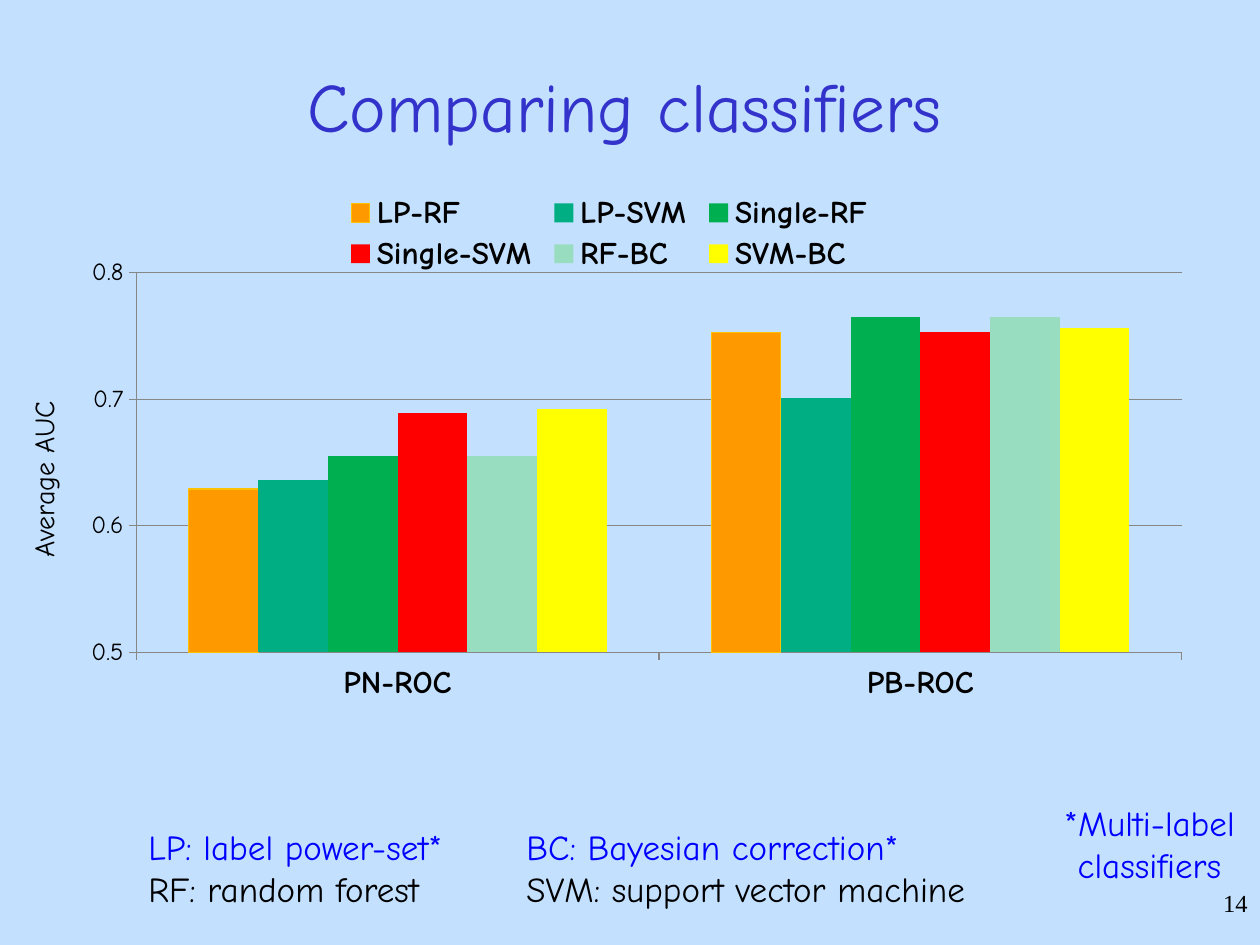
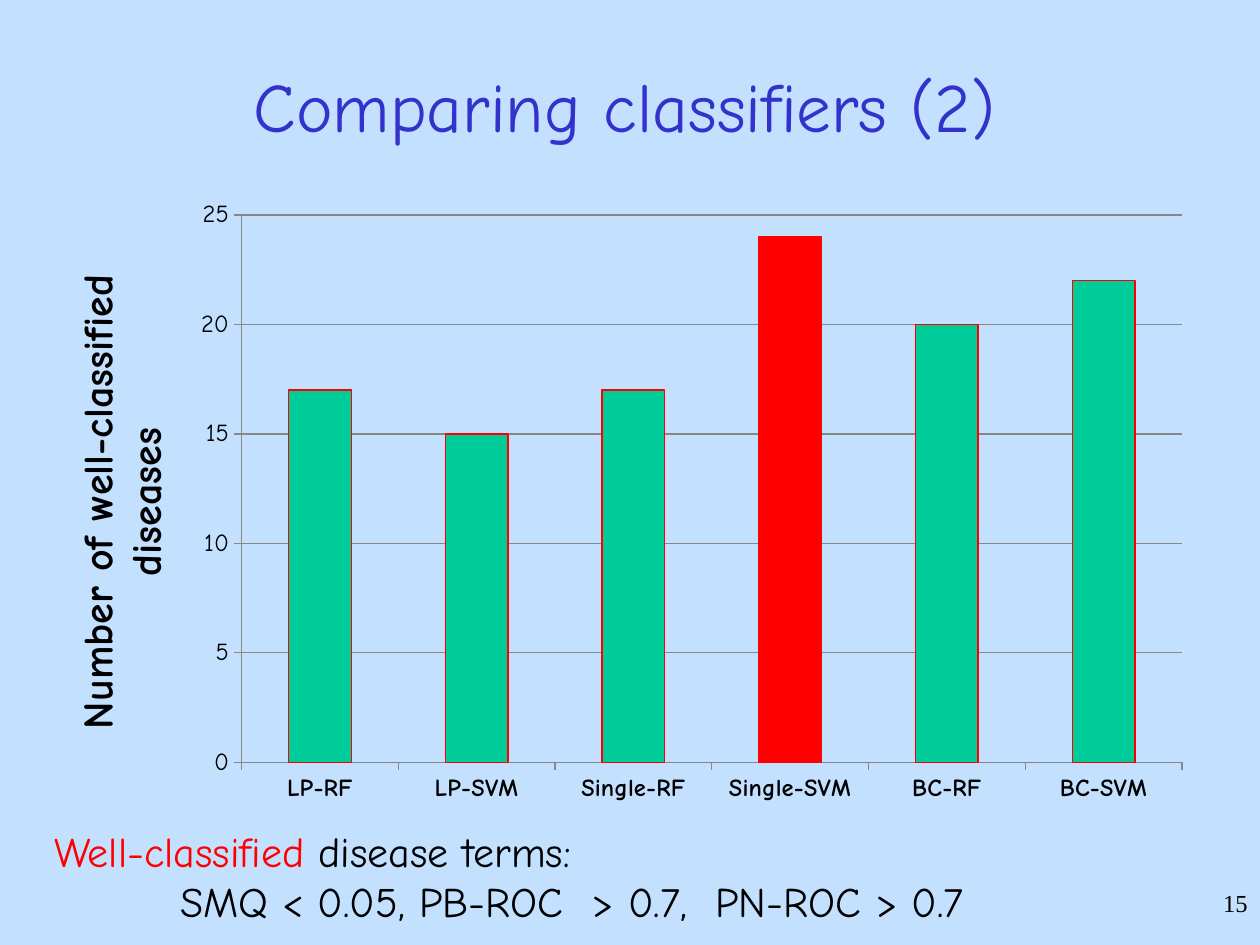
import pptx
import pptx.chart.data
import pptx.dml.color
import pptx.enum.chart
import pptx.enum.text
import pptx.oxml
import pptx.oxml.ns
import pptx.util

EMU_PER_PX = 914400 / 126
SLIDE_SIZE = (1260, 945)
TITLE_BOX = (84, 63, 1081, 84)
NUMBER_BOX = (998, 882, 262, 63)
FONT = "Comic Neue"
NUMBER_FONT = "Times New Roman"
COLORS = {
    "background": "C3E1FF",
    "title": "3333CC",
    "text": "000000",
    "note": "0000FF",
    "grid": "878787",
    "orange": "FF9900",
    "gold": "FFC000",
    "teal": "00AE84",
    "green": "00B050",
    "red": "FF0000",
    "mint": "99DDC0",
    "yellow": "FFFF00",
    "jade": "00CC99",
}
ALIGN = pptx.enum.text.PP_ALIGN


def px(length):
    return pptx.util.Emu(round(length * EMU_PER_PX))


def rgb(name):
    return pptx.dml.color.RGBColor.from_string(COLORS[name])


def style_font(font, size, color="text", bold=False, name=FONT):
    font.name, font.size, font.bold = name, pptx.util.Pt(size), bold
    font.color.rgb = rgb(color)


def add_text(slide, box, paragraphs, size, align=ALIGN.LEFT, name=FONT, middle=False):
    """Each paragraph is a list of (text, color) runs."""
    frame = slide.shapes.add_textbox(*map(px, box)).text_frame
    frame.word_wrap = True
    if middle:
        frame.vertical_anchor = pptx.enum.text.MSO_ANCHOR.MIDDLE
    for index, runs in enumerate(paragraphs):
        paragraph = frame.add_paragraph() if index else frame.paragraphs[0]
        paragraph.alignment = align
        for text, color in runs:
            run = paragraph.add_run()
            run.text = text
            style_font(run.font, size, color, name=name)
    return frame


def add_base_slide(deck, title, number):
    """Background, title and slide number."""
    slide = deck.slides.add_slide(deck.slide_layouts[6])
    slide.background.fill.solid()
    slide.background.fill.fore_color.rgb = rgb("background")
    add_text(slide, TITLE_BOX, [[(title, "title")]], 39.6, ALIGN.CENTER, middle=True)
    add_text(slide, NUMBER_BOX, [[(str(number), "text")]], 14, ALIGN.RIGHT, NUMBER_FONT)
    return slide


def manual_layout(fractions, inner=False):
    """Layout element that fixes x, y, width and height inside a chart."""
    target = '<c:layoutTarget val="inner"/>' if inner else ""
    modes = '<c:xMode val="edge"/><c:yMode val="edge"/>'
    values = "".join(f'<c:{key} val="{v}"/>' for key, v in zip("xywh", fractions))
    return pptx.oxml.parse_xml(
        f'<c:layout {pptx.oxml.ns.nsdecls("c")}><c:manualLayout>'
        f"{target}{modes}{values}</c:manualLayout></c:layout>"
    )


def paint(part, fill, line=None):
    part.format.fill.solid()
    part.format.fill.fore_color.rgb = rgb(fill)
    if line:
        part.format.line.color.rgb = rgb(line)
        part.format.line.width = pptx.util.Pt(0.75)
    else:
        part.format.line.fill.background()


def style_axis(axis, size, bold=False):
    style_font(axis.tick_labels.font, size, bold=bold)
    axis.format.line.color.rgb = rgb("grid")
    axis.major_tick_mark = pptx.enum.chart.XL_TICK_MARK.OUTSIDE
    axis.minor_tick_mark = pptx.enum.chart.XL_TICK_MARK.NONE


def add_columns(slide, box, categories, series, plot, scale, axis_title, category_size):
    """Column chart; series are (name, values, fill, line), scale is (min, max, step)."""
    data = pptx.chart.data.CategoryChartData()
    data.categories = categories
    for name, values, _, _ in series:
        data.add_series(name, values)
    chart = slide.shapes.add_chart(
        pptx.enum.chart.XL_CHART_TYPE.COLUMN_CLUSTERED, *map(px, box), data
    ).chart
    style_font(chart.font, 14)
    chart.has_title = False
    chart.has_legend = False

    columns = chart.plots[0]
    columns.vary_by_categories = False
    columns.gap_width, columns.overlap = 150, 0
    for drawn, (_, _, fill, line) in zip(columns.series, series):
        paint(drawn, fill, line)

    style_axis(chart.category_axis, category_size, bold=True)
    values = chart.value_axis
    style_axis(values, 14)
    values.minimum_scale, values.maximum_scale, values.major_unit = scale
    values.has_major_gridlines = True
    values.major_gridlines.format.line.color.rgb = rgb("grid")
    text, size, bold = axis_title
    frame = values.axis_title.text_frame
    run = frame.paragraphs[0].add_run()
    run.text = text
    style_font(run.font, size, bold=bold)
    body = frame._txBody.bodyPr
    body.set("rot", "-5400000")
    body.set("vert", "horz")

    area = chart._chartSpace.chart.plotArea
    for layout in area.findall(pptx.oxml.ns.qn("c:layout")):
        area.remove(layout)
    area.insert(0, manual_layout(plot, inner=True))
    return chart


def add_top_legend(chart, fractions):
    chart.has_legend = True
    legend = chart.legend
    legend.position = pptx.enum.chart.XL_LEGEND_POSITION.TOP
    legend.include_in_layout = False
    style_font(legend.font, 18, bold=True)
    element = legend._element
    for layout in element.findall(pptx.oxml.ns.qn("c:layout")):
        element.remove(layout)
    element.find(pptx.oxml.ns.qn("c:legendPos")).addnext(manual_layout(fractions))


def add_abbreviations(slide, box, column_offset):
    """Two rows of abbreviations, the second column set by a tab stop."""
    frame = add_text(slide, box, [
        [("LP: label power-set*\tBC: Bayesian correction*", "note")],
        [("RF: random forest\tSVM: support vector machine", "text")],
    ], 20)
    for paragraph in frame.paragraphs:
        paragraph._p.get_or_add_pPr().append(pptx.oxml.parse_xml(
            f'<a:tabLst {pptx.oxml.ns.nsdecls("a")}>'
            f'<a:tab pos="{px(column_offset)}" algn="l"/></a:tabLst>'
        ))


def build_auc_slide(deck):
    slide = add_base_slide(deck, "Comparing classifiers", 14)
    chart = add_columns(
        slide, (21, 179, 1176, 572), ["PN-ROC", "PB-ROC"],
        [
            ("LP-RF", (0.629, 0.753), "orange", "gold"),
            ("LP-SVM", (0.636, 0.701), "teal", None),
            ("Single-RF", (0.655, 0.765), "green", None),
            ("Single-SVM", (0.689, 0.753), "red", None),
            ("RF-BC", (0.655, 0.765), "mint", None),
            ("SVM-BC", (0.692, 0.756), "yellow", None),
        ],
        plot=(0.098, 0.164, 0.889, 0.664), scale=(0.5, 0.8, 0.1),
        axis_title=("Average AUC", 16, False), category_size=18,
    )
    add_top_legend(chart, (0.27, 0.02, 0.46, 0.15))
    add_abbreviations(slide, (136, 819, 892, 97), 378)
    add_text(slide, (976, 795, 347, 97), [[("*Multi-label classifiers", "note")]],
             20, ALIGN.CENTER)


def build_disease_slide(deck):
    slide = add_base_slide(deck, "Comparing classifiers (2)", 15)
    criteria = add_text(slide, (42, 819, 1166, 115), [
        [("Well-classified ", "red"), ("disease terms:", "text")],
        [("SMQ < 0.05, PB-ROC  > 0.7,  PN-ROC > 0.7", "text")],
    ], 24)
    thresholds = criteria.paragraphs[1]._p.get_or_add_pPr()
    thresholds.set("marL", str(px(126)))
    thresholds.set("indent", "0")

    chart = add_columns(
        slide, (62, 193, 1144, 629),
        ["LP-RF", "LP-SVM", "Single-RF", "Single-SVM", "BC-RF", "BC-SVM"],
        [("Series 1", (17, 15, 17, 24, 20, 22), "jade", "red")],
        plot=(0.157, 0.035, 0.822, 0.87), scale=(0, 25, 5),
        axis_title=("Number of well-classified diseases", 24, True), category_size=14,
    )
    # The best classifier stands out
    paint(chart.plots[0].series[0].points[3], "red", "red")


def main():
    deck = pptx.Presentation()
    deck.slide_width, deck.slide_height = map(px, SLIDE_SIZE)
    build_auc_slide(deck)
    build_disease_slide(deck)
    deck.save("out.pptx")


if __name__ == "__main__":
    main()
